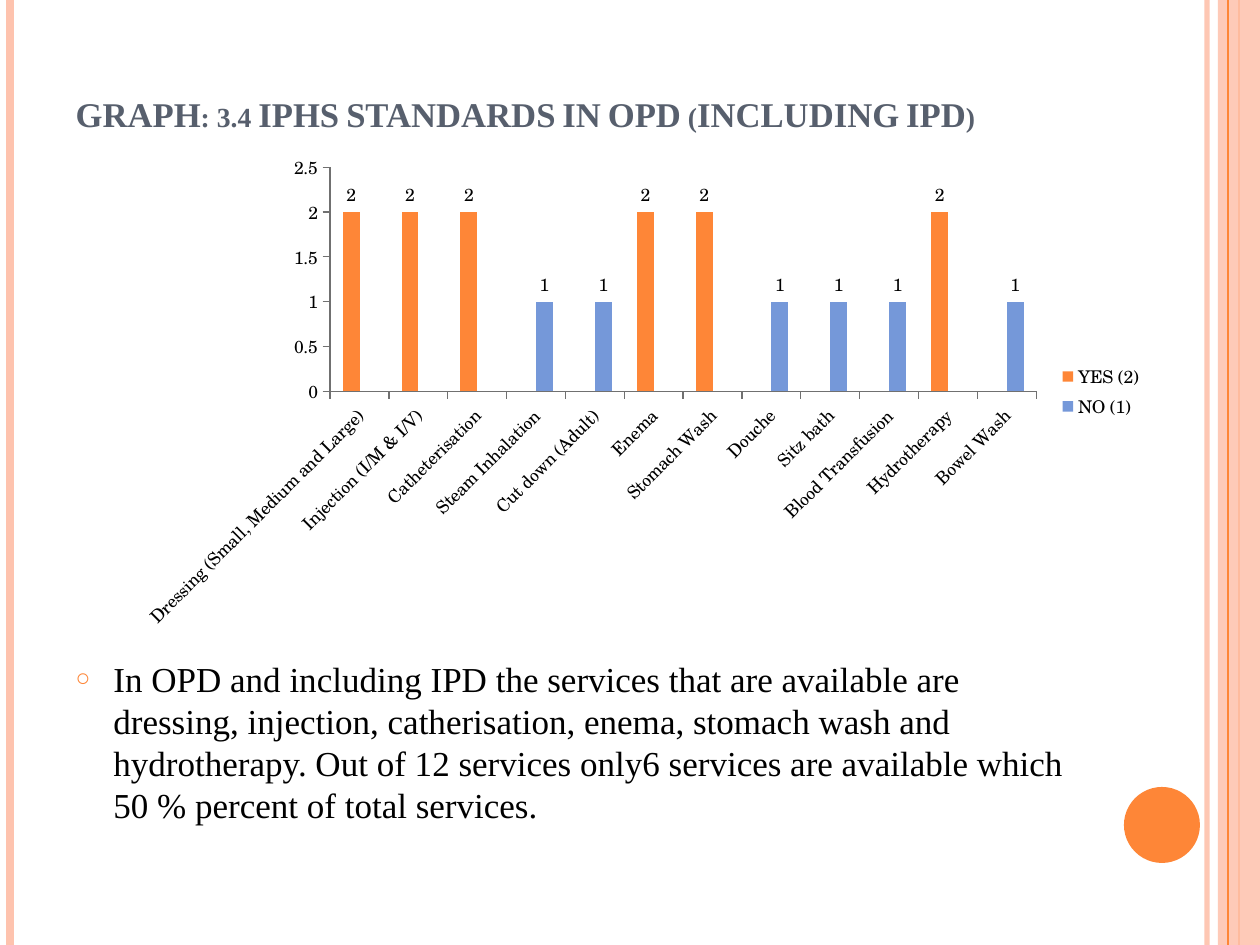
from lxml import etree
from pptx import Presentation
from pptx import util as u
from pptx.chart import data
from pptx.dml.color import RGBColor
from pptx.enum import chart as ch, shapes, text
from pptx.oxml import ns

PX = 914400 / 126
ORANGE = RGBColor(0xFE, 0x86, 0x37)
PEACH = RGBColor(0xFE, 0xC3, 0xAE)
BLUE = RGBColor(0x75, 0x98, 0xD9)
SLATE = RGBColor(0x57, 0x5F, 0x6D)
GREY = RGBColor(0x70, 0x70, 0x70)
BLACK = RGBColor(0, 0, 0)
SERIF = "Times New Roman"
HEAD = "GRAPH: 3.4 IPHS STANDARDS IN OPD (INCLUDING IPD)"
NOTE = (
    "In OPD and including IPD the services that are available are dressing, "
    "injection, catherisation, enema, stomach wash and hydrotherapy. Out of 12 "
    "services only6 services are available which 50 % percent of total services."
)
CARE = [
    ("Dressing (Small, Medium and Large)", True),
    ("Injection (I/M & I/V)", True),
    ("Catheterisation", True),
    ("Steam Inhalation", False),
    ("Cut down (Adult)", False),
    ("Enema", True),
    ("Stomach Wash", True),
    ("Douche", False),
    ("Sitz bath", False),
    ("Blood Transfusion", False),
    ("Hydrotherapy", True),
    ("Bowel Wash", False),
]


def px(n):
    return u.Emu(round(n * PX))


def add_tag(node, tag, **attrs):
    return etree.SubElement(node, ns.qn(tag), attrs)


def fade(node, pct):
    color = next(node.iter(ns.qn("a:srgbClr")))
    add_tag(color, "a:alpha", val=str(pct * 1000))


def add_rail(slide, x, color, width, pct=100):
    rail = slide.shapes.add_connector(
        shapes.MSO_CONNECTOR.STRAIGHT, px(x), 0, px(x), px(945))
    rail.line.color.rgb = color
    rail.line.width = u.Pt(width)
    if pct < 100:
        fade(rail.line._ln, pct)
    add_tag(rail._element.spPr, "a:effectLst")


def add_block(slide, kind, box, color, pct=100):
    block = slide.shapes.add_shape(kind, *map(px, box))
    block.shadow.inherit = False
    block.fill.solid()
    block.fill.fore_color.rgb = color
    block.line.fill.background()
    if pct < 100:
        fade(block._element.spPr.find(ns.qn("a:solidFill")), pct)


def fill_holder(holder, box, words, size, color, anchor):
    holder.left, holder.top, holder.width, holder.height = map(px, box)
    frame = holder.text_frame
    frame.text = words
    frame.word_wrap = True
    frame.auto_size = text.MSO_AUTO_SIZE.NONE
    frame.vertical_anchor = anchor
    para = frame.paragraphs[0]
    para.alignment = text.PP_ALIGN.LEFT
    para.space_before = u.Pt(0)
    font = para.runs[0].font
    font.name, font.size = SERIF, u.Pt(size)
    font.color.rgb = color
    return frame


def set_title(slide):
    frame = fill_holder(slide.shapes.title, (63, 38, 1029, 157), HEAD, 19.8,
                        SLATE, text.MSO_ANCHOR.BOTTOM)
    frame.margin_bottom = px(60)
    font = frame.paragraphs[0].runs[0].font
    font.bold = True
    font._element.set("cap", "small")


def set_body(slide):
    frame = fill_holder(slide.placeholders[1], (63, 220, 1029, 672), NOTE, 20,
                        BLACK, text.MSO_ANCHOR.TOP)
    frame.margin_top = px(437)
    para = frame.paragraphs[0]
    para.line_spacing = u.Pt(24)
    props = para._p.get_or_add_pPr()
    props.set("marL", str(u.Inches(0.3)))
    props.set("indent", str(-u.Inches(0.3)))
    tint = add_tag(props, "a:buClr")
    add_tag(tint, "a:srgbClr", val=str(ORANGE))
    add_tag(props, "a:buSzPct", val="70000")
    add_tag(props, "a:buChar", char="○")


def style_axis(axis):
    axis.has_major_gridlines = False
    axis.major_tick_mark = ch.XL_TICK_MARK.OUTSIDE
    axis.format.line.color.rgb = GREY
    axis.tick_labels.font.size = u.Pt(10)


def add_graph(slide):
    facts = data.CategoryChartData()
    facts.categories = [name for name, _ in CARE]
    facts.add_series("YES (2)", [2 if has else None for _, has in CARE])
    facts.add_series("NO (1)", [None if has else 1 for _, has in CARE])
    box = map(px, (123, 145, 1032, 493))
    graph = slide.shapes.add_chart(
        ch.XL_CHART_TYPE.COLUMN_CLUSTERED, *box, facts).chart
    graph.font.name, graph.font.size = "TeX Gyre Schola", u.Pt(10)
    graph.font.color.rgb = BLACK
    graph.has_title = False
    graph.has_legend = True
    graph.legend.position = ch.XL_LEGEND_POSITION.RIGHT
    graph.legend.include_in_layout = False
    style_axis(graph.category_axis)
    style_axis(graph.value_axis)
    turn = next(graph.category_axis._element.iter(ns.qn("a:bodyPr")))
    turn.set("rot", "-2700000")
    plot = graph.plots[0]
    plot.vary_by_categories = False
    plot.gap_width, plot.overlap = 150, 0
    for bars, color in zip(plot.series, (ORANGE, BLUE)):
        bars.format.fill.solid()
        bars.format.fill.fore_color.rgb = color
        bars.data_labels.show_value = True
        bars.data_labels.position = ch.XL_LABEL_POSITION.OUTSIDE_END


def main():
    deck = Presentation()
    deck.slide_width, deck.slide_height = px(1260), px(945)
    slide = deck.slides.add_slide(deck.slide_layouts[1])
    add_rail(slide, 1207, PEACH, 3, 93)
    add_rail(slide, 10, PEACH, 4.5)
    add_rail(slide, 1239, ORANGE, 1.5)
    add_block(slide, shapes.MSO_SHAPE.RECTANGLE, (1218, 0, 42, 945), PEACH, 87)
    add_rail(slide, 1228, ORANGE, 0.75)
    add_block(slide, shapes.MSO_SHAPE.OVAL, (1124, 787, 76, 76), ORANGE)
    set_title(slide)
    set_body(slide)
    add_graph(slide)
    deck.save("out.pptx")


if __name__ == "__main__":
    main()
